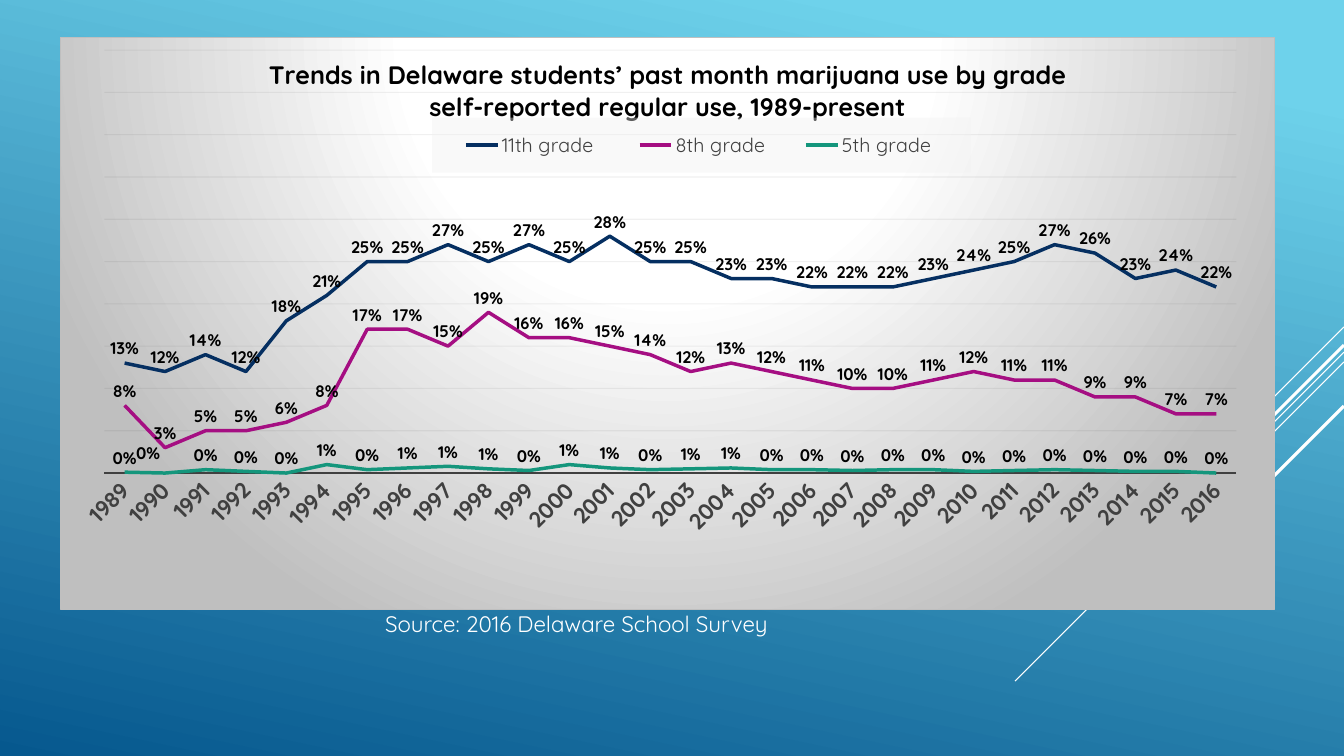
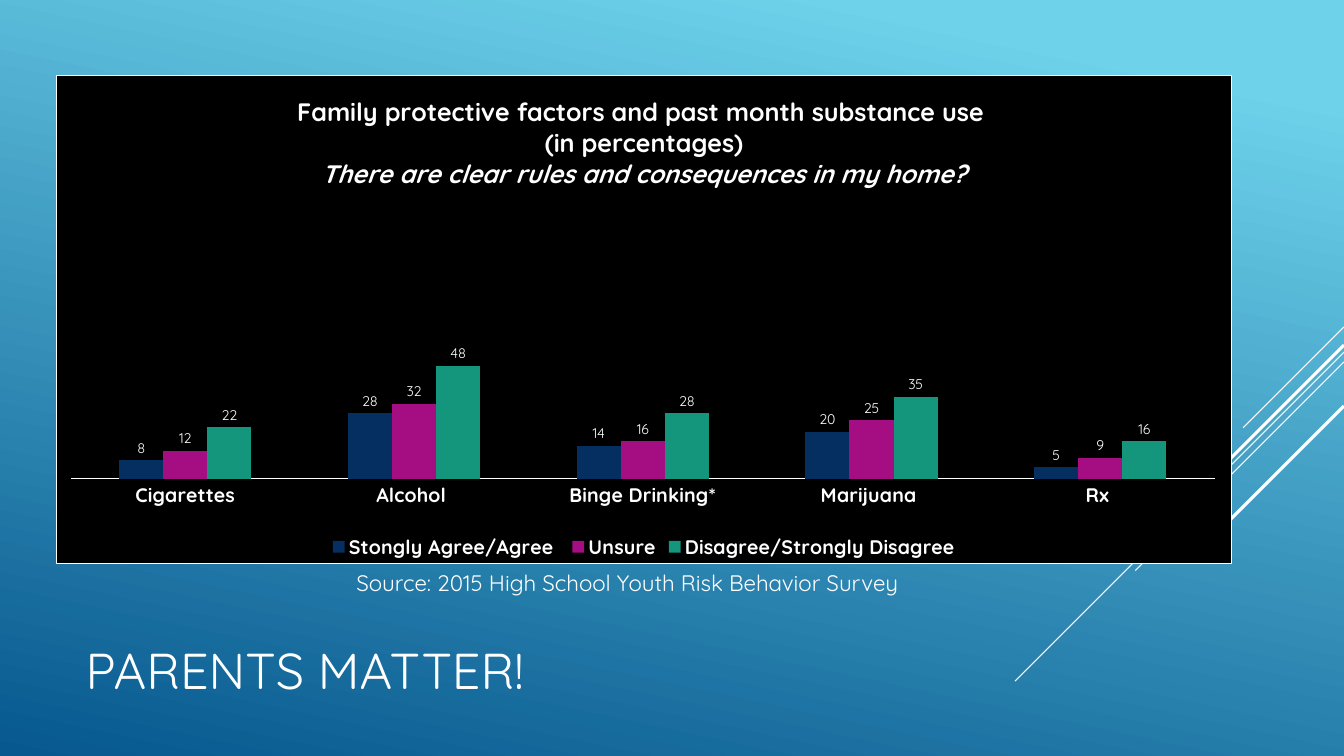
"""Build two chart slides on substance use among students."""
from lxml import etree
from pptx import Presentation
from pptx.chart.data import CategoryChartData
from pptx.dml.color import RGBColor
from pptx.enum.chart import XL_CHART_TYPE, XL_LABEL_POSITION, XL_LEGEND_POSITION, XL_TICK_MARK
from pptx.enum.shapes import MSO_CONNECTOR
from pptx.enum.text import MSO_ANCHOR, PP_ALIGN
from pptx.oxml import parse_xml
from pptx.oxml.ns import nsdecls, qn
from pptx.util import Pt

LINE, COLUMN = XL_CHART_TYPE.LINE, XL_CHART_TYPE.COLUMN_CLUSTERED
ABOVE, OUTSIDE = XL_LABEL_POSITION.ABOVE, XL_LABEL_POSITION.OUTSIDE_END
BOTTOM, NONE = XL_LEGEND_POSITION.BOTTOM, XL_TICK_MARK.NONE
STRAIGHT = MSO_CONNECTOR.STRAIGHT
LEFT, CENTER, LOW = PP_ALIGN.LEFT, PP_ALIGN.CENTER, MSO_ANCHOR.BOTTOM

WIDE, HIGH = 960, 540
FONT = "Quicksand"
COLORS = {
    "white": "FFFFFF", "black": "000000", "sky": "6ED2EB", "deep": "06588E",
    "gray": "404040", "grid": "0D0D0D", "edge": "BFBFBF", "pale": "F2F2F2",
    "navy": "052F61", "plum": "A50E82", "teal": "14967C",
}
SERIES = ("navy", "plum", "teal")
RAYS = ((233.5, 72, 0.75), (251.5, 235, 0.75), (258.5, 149, 0.75),
        (246.5, 137.5, 2.25), (290, 100, 2.25))

YEARS = list(range(1989, 2017))
TRENDS = {
    "11th grade ": (13, 12, 14, 12, 18, 21, 25, 25, 27, 25, 27, 25, 28, 25,
                    25, 23, 23, 22, 22, 22, 23, 24, 25, 27, 26, 23, 24, 22),
    "8th grade": (8, 3, 5, 5, 6, 8, 17, 17, 15, 19, 16, 16, 15, 14,
                  12, 13, 12, 11, 10, 10, 11, 12, 11, 11, 9, 9, 7, 7),
    "5th grade ": (0.1, 0, 0.4, 0.2, 0, 1, 0.4, 0.6, 0.8, 0.5, 0.3, 1, 0.6, 0.4,
                   0.5, 0.6, 0.4, 0.4, 0.3, 0.4, 0.4, 0.2, 0.3, 0.4, 0.3, 0.2, 0.2, 0),
}
DRUGS = ["Cigarettes", "Alcohol ", "Binge Drinking*", "Marijuana ", "Rx "]
RULES = {
    "Stongly Agree/Agree ": (8, 28, 14, 20, 5),
    "Unsure": (12, 32, 16, 25, 9),
    "Disagree/Strongly Disagree": (22, 48, 28, 35, 16),
}


def rgb(name):
    """Return the named colour."""
    return RGBColor.from_string(COLORS[name])


def style(font, size, color, bold=False):
    """Format a font."""
    font.name, font.size, font.bold = FONT, Pt(size), bold
    font.color.rgb = rgb(color)


def write(frame, text, size, color, align, bold=False):
    """Fill a text frame with evenly formatted paragraphs."""
    frame.text = text
    for para in frame.paragraphs:
        para.alignment = align
        for run in para.runs:
            style(run.font, size, color, bold)


def label(slide, box, text, align):
    """Add a source line."""
    frame = slide.shapes.add_textbox(*map(Pt, box)).text_frame
    frame.word_wrap = True
    write(frame, text, 16, "white", align)


def solid(color, alpha=100):
    """Return the markup of a plain fill."""
    return (f'<a:solidFill><a:srgbClr val="{COLORS[color]}">'
            f'<a:alpha val="{alpha * 1000}"/></a:srgbClr></a:solidFill>')


def glow():
    """Return the markup of a round fill from white to gray."""
    stops = "".join(
        f'<a:gs pos="{pos * 1000}"><a:srgbClr val="{COLORS[color]}"/></a:gs>'
        for pos, color in ((0, "white"), (39, "white"), (100, "edge")))
    return (f'<a:gradFill><a:gsLst>{stops}</a:gsLst><a:path path="circle">'
            '<a:fillToRect l="50000" t="-80000" r="50000" b="180000"/>'
            '</a:path></a:gradFill>')


def paint(node, fill, edge=None):
    """Put fill and border properties after a chart node."""
    line = f'<a:ln w="{Pt(0.75)}">{solid(edge)}</a:ln>' if edge else ""
    node.addnext(parse_xml(f'<c:spPr {nsdecls("c", "a")}>{fill}{line}</c:spPr>'))


def place(node, spot, **values):
    """Give a chart node a manual layout at a child index."""
    for old in node.findall(qn("c:layout")):
        node.remove(old)
    layout = etree.Element(qn("c:layout"))
    manual = etree.SubElement(layout, qn("c:manualLayout"))
    for key, value in values.items():
        etree.SubElement(manual, qn(f"c:{key}")).set("val", str(value))
    node.insert(spot, layout)


def plot(slide, kind, box, cats, rows, title, ink, top, scale=1, form="General"):
    """Add a chart with the shared title, legend and axis style."""
    data = CategoryChartData(number_format=form)
    data.categories = cats
    for name, values in rows.items():
        data.add_series(name, [round(value / scale, 3) for value in values])
    chart = slide.shapes.add_chart(kind, *map(Pt, box), data).chart
    style(chart.font, 10, "white")
    chart.has_title = chart.has_legend = True
    write(chart.chart_title.text_frame, title, 18, ink, CENTER, True)
    chart.chart_title.include_in_layout = False
    chart.legend.position = BOTTOM
    chart.legend.include_in_layout = False
    axis = chart.value_axis
    axis.visible = axis.has_major_gridlines = False
    axis.minimum_scale, axis.maximum_scale = 0, top
    chart.category_axis.major_tick_mark = NONE
    chart.plots[0].vary_by_categories = False
    return chart


def rule(axis, size, color, width):
    """Format the category axis."""
    style(axis.tick_labels.font, size, color, True)
    axis.format.line.color.rgb = rgb(color)
    axis.format.line.width = Pt(width)


def mark(labels, spot, size, color, bold):
    """Format the value labels of a series."""
    labels.show_value = True
    labels.position = spot
    style(labels.font, size, color, bold)


def trend(slide):
    """Add the line chart of use by year."""
    title = ("Trends in Delaware students’ past month marijuana use by grade\n"
             "self-reported regular use, 1989-present")
    chart = plot(slide, LINE, (43, 26.5, 867.5, 409), YEARS, TRENDS, title,
                 "black", 0.5, 100, "0%")
    root = chart.element
    paint(root.find(qn("c:chart")), glow(), "edge")
    place(root.xpath(".//c:plotArea")[0], 0, layoutTarget="inner",
          xMode="edge", yMode="edge", x=0.036, y=0.022, w=0.933, h=0.74)
    rule(chart.category_axis, 16, "gray", 1.5)
    root.xpath(".//c:catAx/c:txPr/a:bodyPr")[0].set("rot", "-2700000")
    axis = chart.value_axis
    axis.major_unit = 0.05
    axis.has_major_gridlines = True
    grid = axis.major_gridlines.format.line
    grid.color.rgb, grid.width = rgb("grid"), Pt(0.75)
    tint = root.xpath(".//c:majorGridlines//a:srgbClr")[0]
    etree.SubElement(tint, qn("a:alpha")).set("val", "5000")
    style(chart.legend.font, 14, "gray")
    legend = root.xpath(".//c:legend")[0]
    place(legend, 1, xMode="edge", yMode="edge", x=0.306, y=0.14, w=0.444, h=0.096)
    paint(legend.find(qn("c:overlay")), solid("pale", 39))
    for row, color in zip(chart.plots[0].series, SERIES):
        row.smooth = False
        row.format.line.color.rgb = rgb(color)
        row.format.line.width = Pt(2.5)
        mark(row.data_labels, ABOVE, 12, "black", True)
    point = row.points[1].data_label
    point.position = ABOVE
    style(point.font, 12, "black", True)
    place(root.xpath(".//c:dLbl")[0], 1, x=-0.014, y=-0.01)


def family(slide):
    """Add the column chart of use by family rules."""
    title = ("Family protective factors and past month substance use \n"
             "(in percentages)\n"
             "There are clear rules and consequences in my home?")
    chart = plot(slide, COLUMN, (40.25, 53.75, 839.5, 349), DRUGS, RULES, title,
                 "white", 100)
    root = chart.element
    chart.chart_title.text_frame.paragraphs[2].runs[0].font.italic = True
    paint(root.find(qn("c:chart")), solid("black"), "white")
    place(root.xpath(".//c:plotArea")[0], 0, layoutTarget="inner",
          xMode="edge", yMode="edge", x=0.012, y=0.345, w=0.974, h=0.482)
    rule(chart.category_axis, 14, "white", 0.75)
    style(chart.legend.font, 14, "white", True)
    chart.plots[0].gap_width, chart.plots[0].overlap = 219, 0
    for row, color in zip(chart.plots[0].series, SERIES):
        row.format.fill.solid()
        row.format.fill.fore_color.rgb = rgb(color)
        mark(row.data_labels, OUTSIDE, 10, "white", False)


def theme(master, slide):
    """Give the master its background and slanted rays."""
    fill = master.background.fill
    fill.gradient()
    fill.gradient_angle = 258
    for stop, color, pos in zip(fill.gradient_stops, ("sky", "deep"), (0.1, 1)):
        stop.color.rgb, stop.position = rgb(color), pos
    for num, (top, run, width) in enumerate(RAYS, 20):
        ray = slide.shapes.add_connector(
            STRAIGHT, Pt(WIDE), Pt(top), Pt(WIDE - run), Pt(top + run))
        ray.line.color.rgb, ray.line.width = rgb("white"), Pt(width)
        node = ray.element
        etree.SubElement(node.spPr, qn("a:effectLst"))
        node.xpath(".//p:cNvPr")[0].set("id", str(num))
        master.shapes.element.append(node)


def head(slide, text):
    """Place and fill the title."""
    shape = slide.shapes.title
    shape.left, shape.top, shape.width, shape.height = map(Pt, (54, 353.5, 672, 163.5))
    frame = shape.text_frame
    frame.vertical_anchor, frame.margin_bottom = LOW, Pt(17)
    write(frame, text, 36, "white", LEFT)


def main():
    """Build and save the slides."""
    prs = Presentation()
    prs.slide_width, prs.slide_height = Pt(WIDE), Pt(HIGH)
    first = prs.slides.add_slide(prs.slide_layouts[6])
    theme(prs.slide_master, first)
    trend(first)
    label(first, (258, 432, 307.5, 27), "Source: 2016 Delaware School Survey", CENTER)
    second = prs.slides.add_slide(prs.slide_layouts[5])
    head(second, "PARENTS MATTER!")
    family(second)
    label(second, (247.5, 403, 425, 27),
          "Source: 2015 High School Youth Risk Behavior Survey", LEFT)
    prs.save("out.pptx")


if __name__ == "__main__":
    main()
